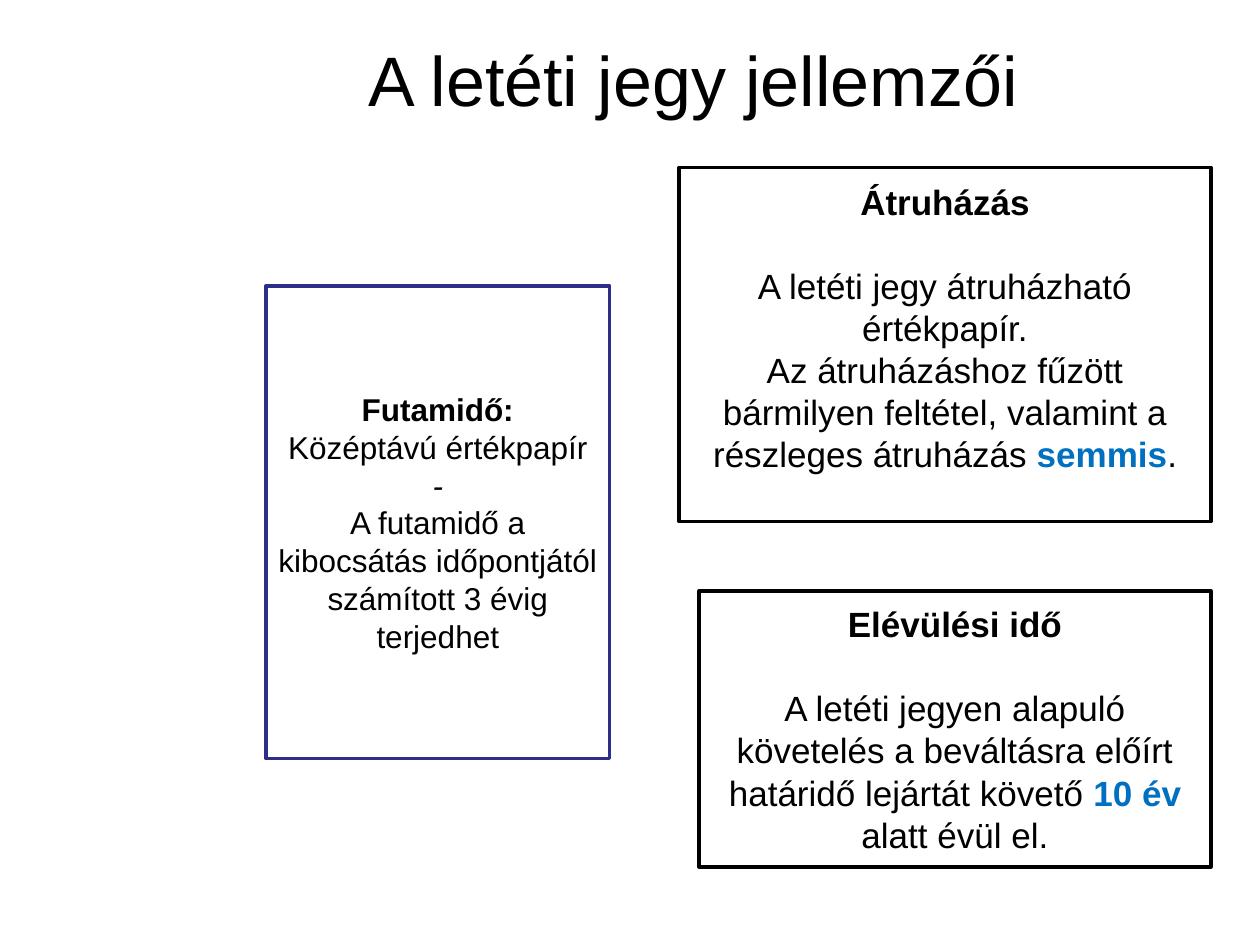
import dataclasses

import pptx
import pptx.dml.color
import pptx.enum.shapes
import pptx.enum.text
import pptx.util

Inches = pptx.util.Inches
Pt = pptx.util.Pt
RGB = pptx.dml.color.RGBColor
Shape = pptx.enum.shapes.MSO_SHAPE


@dataclasses.dataclass(frozen=True)
class Theme:
    """Colours and type sizes of the slide."""

    font: str = "Arial"
    ink: RGB = RGB(0, 0, 0)
    paper: RGB = RGB(255, 255, 255)
    accent: RGB = RGB(0x00, 0x70, 0xC0)
    frame: RGB = RGB(0x2D, 0x2D, 0x8A)
    title_size: int = 40
    body_size: int = 20
    small_size: int = 18
    outline: int = 2


class SlideBuilder:
    """Adds styled elements to the current slide."""

    def __init__(self, slide, theme):
        self.slide = slide
        self.theme = theme

    def style(self, paragraph, size, bold=False, italic=False):
        """Centre a paragraph and set its font."""
        paragraph.alignment = pptx.enum.text.PP_ALIGN.CENTER
        font = paragraph.font
        font.name = self.theme.font
        font.size = Pt(size)
        font.bold = bold
        font.italic = italic
        font.color.rgb = self.theme.ink

    def title(self, text, left, top, width, height):
        """Place and format the title placeholder."""
        title = self.slide.shapes.title
        title.left, title.top = Inches(left), Inches(top)
        title.width, title.height = Inches(width), Inches(height)
        frame = title.text_frame
        frame.vertical_anchor = pptx.enum.text.MSO_ANCHOR.MIDDLE
        frame.text = text
        self.style(frame.paragraphs[0], self.theme.title_size)

    def card(self, kind, bounds, line, size, heading, body, gap=0, bottom=0.05):
        """Draw a framed box with a bold heading and body paragraphs."""
        box = self.slide.shapes.add_shape(kind, *map(Inches, bounds))
        box.shadow.inherit = False
        box.fill.solid()
        box.fill.fore_color.rgb = self.theme.paper
        box.line.color.rgb = line
        box.line.width = Pt(self.theme.outline)
        frame = box.text_frame
        frame.word_wrap = True
        frame.vertical_anchor = pptx.enum.text.MSO_ANCHOR.MIDDLE
        frame.margin_bottom = Inches(bottom)
        frame.text = heading
        self.style(frame.paragraphs[0], size, bold=True)
        frame.paragraphs[0].space_after = Pt(gap)
        for parts in body:
            paragraph = frame.add_paragraph()
            self.style(paragraph, size, italic=parts == ["-"])
            for index, part in enumerate(parts):
                run = paragraph.add_run()
                run.text = part
                if index % 2:
                    run.font.bold = True
                    run.font.color.rgb = self.theme.accent


def main():
    """Build and save the slide."""
    theme = Theme()
    deck = pptx.Presentation()
    deck.slide_width, deck.slide_height = Inches(10), Inches(7.5)
    builder = SlideBuilder(deck.slides.add_slide(deck.slide_layouts[5]), theme)

    builder.title("A letéti jegy jellemzői", 1, 0, 9, 1.25)
    builder.card(
        Shape.RECTANGLE, (2.11, 2.27, 2.73, 3.75), theme.frame, theme.small_size,
        "Futamidő:",
        [
            ["Középtávú értékpapír"],
            ["-"],
            ["A futamidő a kibocsátás időpontjától számított 3 évig terjedhet"],
        ],
    )
    builder.card(
        Shape.FLOWCHART_PROCESS, (5.55, 4.69, 4.06, 2.19), theme.ink, theme.body_size,
        "Elévülési idő",
        [[
            "A letéti jegyen alapuló követelés a beváltásra előírt határidő lejártát követő ",
            "10 év ",
            "alatt évül el.",
        ]],
        gap=24,
    )
    builder.card(
        Shape.FLOWCHART_PROCESS, (5.39, 1.33, 4.22, 2.81), theme.ink, theme.body_size,
        "Átruházás",
        [
            ["A letéti jegy átruházható értékpapír."],
            [
                "Az átruházáshoz fűzött bármilyen feltétel, valamint a részleges átruházás ",
                "semmis",
                ".",
            ],
        ],
        gap=24, bottom=0.32,
    )
    deck.save("out.pptx")


if __name__ == "__main__":
    main()
